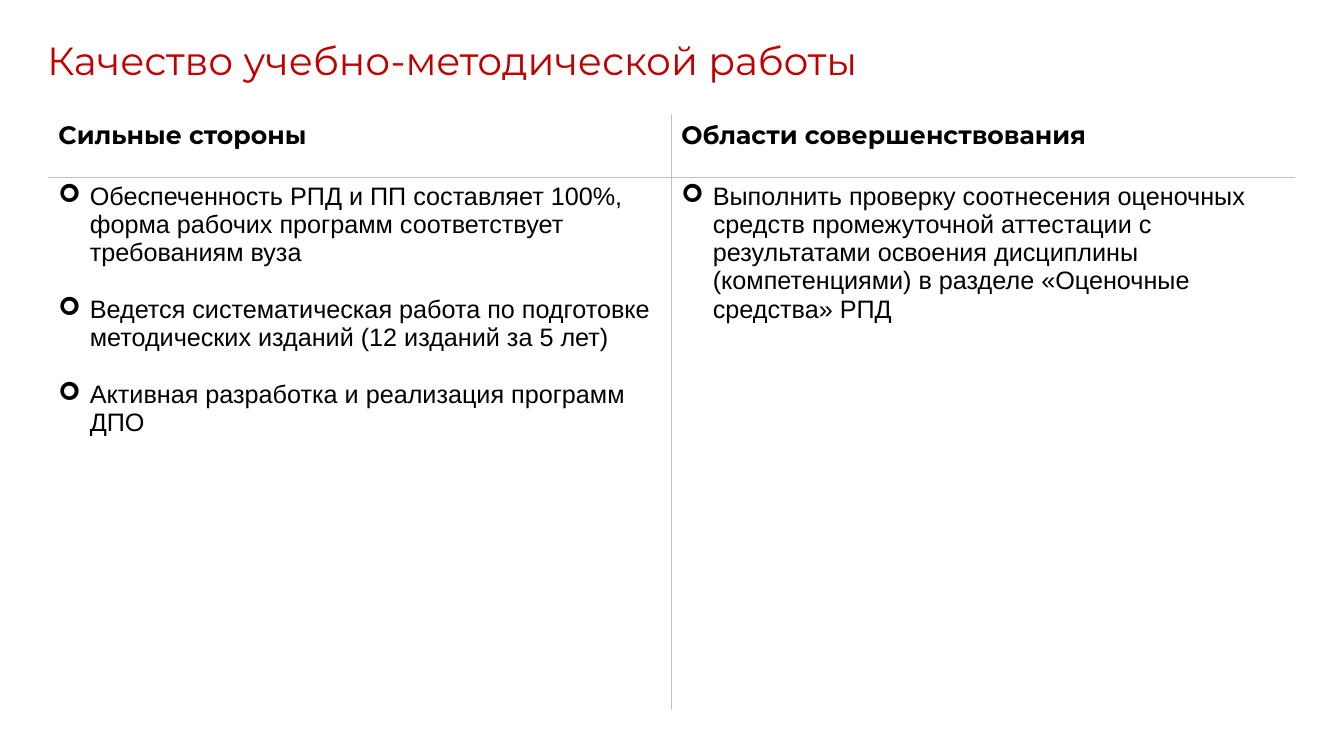
from dataclasses import dataclass

import lxml.etree
import pptx
import pptx.dml.color
import pptx.enum.text
import pptx.oxml.ns
import pptx.table
import pptx.text.text
import pptx.util

Cm = pptx.util.Cm
Pt = pptx.util.Pt


@dataclass(frozen=True)
class Theme:
    title_color: str = "C00000"
    text_color: str = "000000"
    grid_color: str = "BFBFBF"
    background_color: str = "FFFFFF"
    heading_font: str = "Montserrat"
    body_font: str = "Arial"
    title_size: int = 28
    text_size: int = 18
    item_gap: float = 20.5


@dataclass(frozen=True)
class Column:
    heading: str
    items: tuple[str, ...]


THEME = Theme()
TITLE = "Качество учебно-методической работы"
COLUMNS = (
    Column("Сильные стороны", (
        "Обеспеченность РПД и ПП составляет 100%, форма рабочих программ соответствует требованиям вуза",
        "Ведется систематическая работа по подготовке методических изданий (12 изданий за 5 лет)",
        "Активная разработка и реализация программ ДПО",
    )),
    Column("Области совершенствования", (
        "Выполнить проверку соотнесения оценочных средств промежуточной аттестации "
        "с результатами освоения дисциплины (компетенциями) в разделе «Оценочные средства» РПД",
    )),
)
COLUMN_WIDTH = Cm(15.7)
ROW_HEIGHTS = (Cm(1.57), Cm(13.44))
BULLET_INDENT = Cm(0.79)


def add_element(parent: lxml.etree._Element, name: str, **attributes: str) -> lxml.etree._Element:
    return lxml.etree.SubElement(parent, pptx.oxml.ns.qn(name), attributes)


def write_text(paragraph: pptx.text.text._Paragraph, text: str, *, font: str = THEME.body_font,
               size: int = THEME.text_size, color: str = THEME.text_color, bold: bool = False) -> None:
    run = paragraph.add_run()
    run.text = text
    run.font.name = font
    run.font.size = Pt(size)
    run.font.bold = bold
    run.font.color.rgb = pptx.dml.color.RGBColor.from_string(color)


def add_bullet(paragraph: pptx.text.text._Paragraph) -> None:
    properties = paragraph._p.get_or_add_pPr()
    properties.set("marL", str(BULLET_INDENT))
    properties.set("indent", str(-BULLET_INDENT))
    add_element(properties, "a:buFont", typeface="Wingdings")
    add_element(properties, "a:buChar", char="➢")


def style_cell(cell: pptx.table._Cell, row: int, column: int) -> None:
    """Draw grey lines between cells and background-coloured lines on the outside."""
    inner_sides = {"R" if column == 0 else "L", "B" if row == 0 else "T"}
    properties = cell._tc.get_or_add_tcPr()
    for side in "LRTB":
        line = add_element(properties, f"a:ln{side}", w=str(Pt(1)))
        fill = add_element(line, "a:solidFill")
        color = THEME.grid_color if side in inner_sides else THEME.background_color
        add_element(fill, "a:srgbClr", val=color)
    cell.fill.background()


def write_items(cell: pptx.table._Cell, items: tuple[str, ...]) -> None:
    for index, item in enumerate(items):
        paragraph = cell.text_frame.add_paragraph() if index else cell.text_frame.paragraphs[0]
        if index:
            paragraph.space_before = Pt(THEME.item_gap)
        add_bullet(paragraph)
        write_text(paragraph, item)


def main() -> None:
    presentation = pptx.Presentation()
    presentation.slide_width = Cm(33.87)
    presentation.slide_height = Cm(19.05)
    slide = presentation.slides.add_slide(presentation.slide_layouts[6])

    title = slide.shapes.add_textbox(Cm(0.94), Cm(0.79), Cm(22.76), Cm(1.45)).text_frame
    title.word_wrap = False
    title.auto_size = pptx.enum.text.MSO_AUTO_SIZE.SHAPE_TO_FIT_TEXT
    write_text(title.paragraphs[0], TITLE, font=THEME.heading_font,
               size=THEME.title_size, color=THEME.title_color)

    table = slide.shapes.add_table(len(ROW_HEIGHTS), len(COLUMNS), Cm(1.22), Cm(2.9),
                                   COLUMN_WIDTH * len(COLUMNS), sum(ROW_HEIGHTS)).table
    table.first_row = False
    table.horz_banding = False
    for table_row, height in zip(table.rows, ROW_HEIGHTS):
        table_row.height = height
    for index, column in enumerate(COLUMNS):
        table.columns[index].width = COLUMN_WIDTH
        for row in range(len(ROW_HEIGHTS)):
            style_cell(table.cell(row, index), row, index)
        write_text(table.cell(0, index).text_frame.paragraphs[0], column.heading,
                   font=THEME.heading_font, bold=True)
        write_items(table.cell(1, index), column.items)

    presentation.save("out.pptx")


if __name__ == "__main__":
    main()
